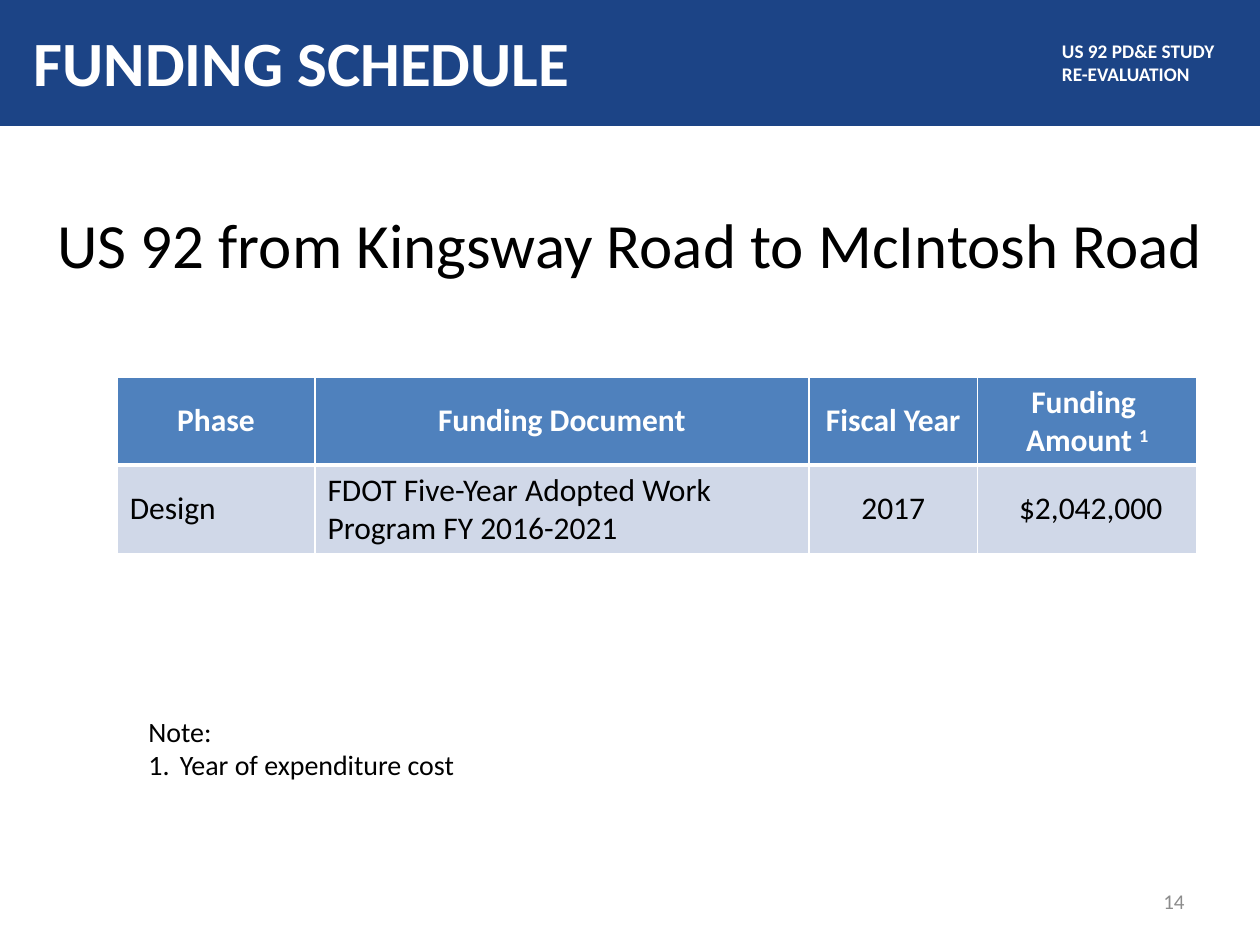
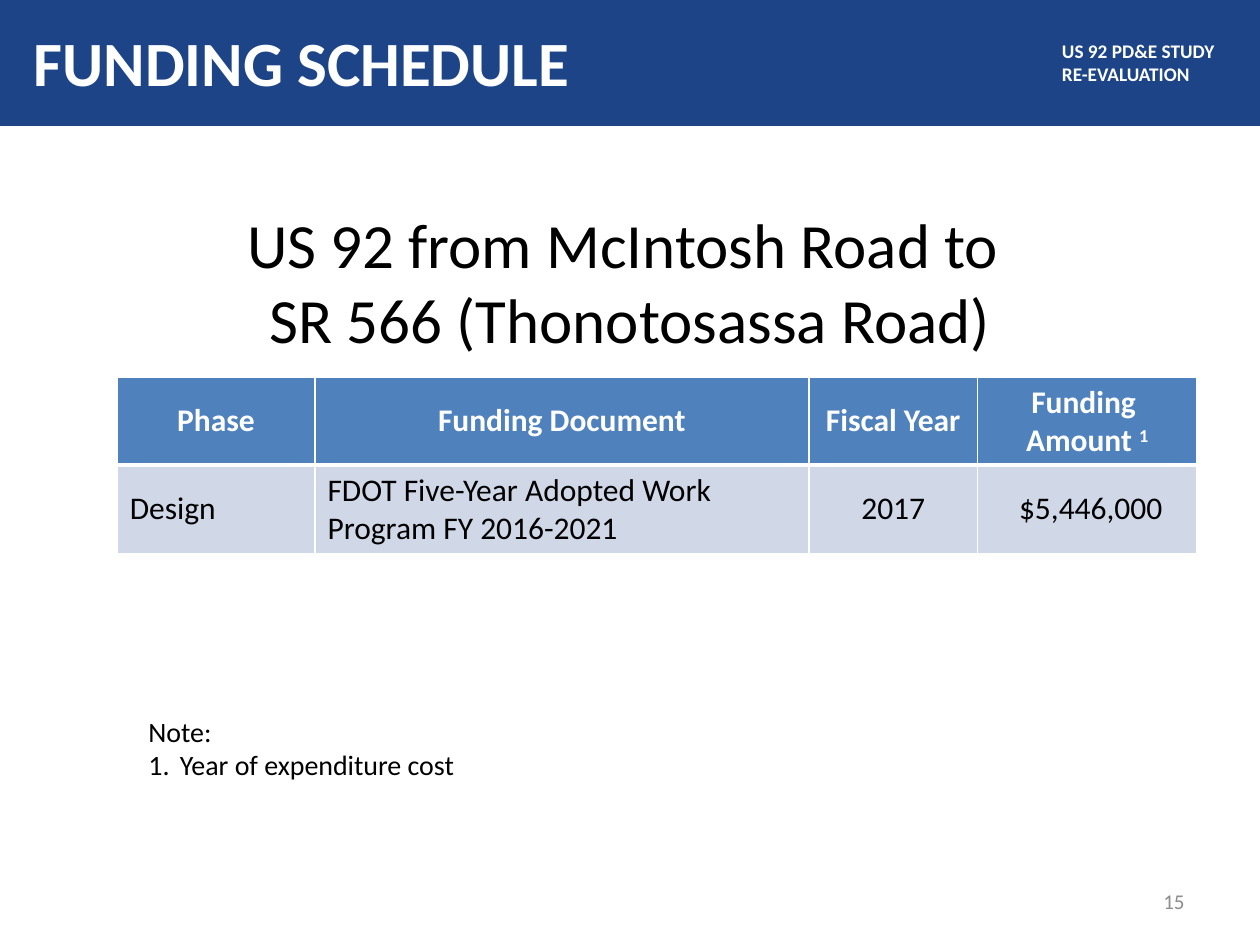
from lxml import etree
from pptx import Presentation
from pptx import util as u
from pptx.dml import color as dml
from pptx.enum import shapes, text
from pptx.oxml import ns

FONT = "Calibri"
COLORS = {
    "band": "1C4486",
    "header": "4F81BD",
    "row": "D0D8E8",
    "white": "FFFFFF",
    "black": "000000",
    "number": "8C8C8C",
}
LEFT, CENTER, RIGHT = text.PP_ALIGN.LEFT, text.PP_ALIGN.CENTER, text.PP_ALIGN.RIGHT
TOP, MIDDLE = text.MSO_ANCHOR.TOP, text.MSO_ANCHOR.MIDDLE

SLIDE_WIDTH, SLIDE_HEIGHT = 10, 7.5
BAND_BOX = (0, 0, SLIDE_WIDTH, 1)
HEADING_BOX = (0, 1.58, SLIDE_WIDTH, 0.71)
TABLE_BOX = (0.93, 2.99, 8.57, 1.4)
NOTE_BOX = (1.08, 5.62, 8, 0.64)
NUMBER_BOX = (7.17, 6.95, 2.33, 0.4)

COLUMN_WIDTHS = (1.57, 3.92, 1.34, 1.74)
HEADERS = ("Phase", "Funding Document", "Fiscal Year", "Funding \nAmount ")
BODY_ALIGNMENTS = (LEFT, LEFT, CENTER, CENTER)
FIRST_NUMBER = 14
SCHEDULES = [
    (["US 92 from Kingsway Road to McIntosh Road"],
     ("Design", "FDOT Five-Year Adopted Work Program FY 2016-2021", "2017", " $2,042,000")),
    (["US 92 from McIntosh Road to ", "SR 566 (Thonotosassa Road)"],
     ("Design", "FDOT Five-Year Adopted Work Program FY 2016-2021", "2017", " $5,446,000")),
]


def rgb(name):
    return dml.RGBColor.from_string(COLORS[name])


def add_run(paragraph, words, size, color, bold=False):
    for index, line in enumerate(words.split("\n")):
        if index:
            paragraph.add_line_break()
        run = paragraph.add_run()
        run.text = line
        run.font.name = FONT
        run.font.size = u.Pt(size)
        run.font.bold = bold
        run.font.color.rgb = rgb(color)
    return run


def add_text(slide, box, lines, size, color, bold=False, align=LEFT, anchor=TOP):
    frame = slide.shapes.add_textbox(*map(u.Inches, box)).text_frame
    frame.word_wrap = True
    frame.vertical_anchor = anchor
    for index, line in enumerate(lines):
        paragraph = frame.add_paragraph() if index else frame.paragraphs[0]
        paragraph.alignment = align
        add_run(paragraph, line, size, color, bold)
    return frame


def add_band(slide, box):
    left, top, width, height = box
    band = slide.shapes.add_shape(shapes.MSO_SHAPE.RECTANGLE, *map(u.Inches, box))
    band.shadow.inherit = False
    band.fill.solid()
    band.fill.fore_color.rgb = rgb("band")
    band.line.fill.background()
    add_text(slide, (left + width - 1.67, top + 0.26, 1.67, 0.47),
             ["US 92 PD&E STUDY\nRE-EVALUATION"], 11, "white", bold=True)
    add_text(slide, (left + 0.17, top + 0.02, 6.5, height - 0.06),
             ["FUNDING SCHEDULE"], 36, "white", bold=True, anchor=MIDDLE)


def set_borders(cell, widths):
    properties = cell._tc.get_or_add_tcPr()
    for side, width in zip("LRTB", widths):
        line = etree.SubElement(properties, ns.qn(f"a:ln{side}"), w=str(u.Pt(width)))
        fill = etree.SubElement(line, ns.qn("a:solidFill"))
        etree.SubElement(fill, ns.qn("a:srgbClr"), val=COLORS["white"])


def fill_cell(cell, words, fill, color, bold, align, borders):
    set_borders(cell, borders)
    cell.fill.solid()
    cell.fill.fore_color.rgb = rgb(fill)
    cell.vertical_anchor = MIDDLE
    paragraph = cell.text_frame.paragraphs[0]
    paragraph.alignment = align
    add_run(paragraph, words, 18, color, bold)


def add_schedule(slide, box, values):
    table = slide.shapes.add_table(2, len(HEADERS), *map(u.Inches, box)).table
    for row in table.rows:
        row.height = u.Inches(box[3] / 2)
    for index, width in enumerate(COLUMN_WIDTHS):
        table.columns[index].width = u.Inches(width)
        fill_cell(table.cell(0, index), HEADERS[index], "header", "white", True,
                  CENTER, (1, 1, 1, 3))
        fill_cell(table.cell(1, index), values[index], "row", "black", False,
                  BODY_ALIGNMENTS[index], (1, 1, 3, 1))
    amount_header = table.cell(0, len(HEADERS) - 1).text_frame.paragraphs[0]
    footnote_mark = add_run(amount_header, "1", 18, "white", True)
    footnote_mark.font._element.set("baseline", "30000")


def add_note(slide, box):
    frame = add_text(slide, box, ["Note:", "Year of expenditure cost"], 16, "black")
    properties = frame.paragraphs[1]._p.get_or_add_pPr()
    properties.set("marL", str(u.Inches(0.25)))
    properties.set("indent", str(-u.Inches(0.25)))
    etree.SubElement(properties, ns.qn("a:buFont"), typeface=FONT)
    etree.SubElement(properties, ns.qn("a:buAutoNum"), type="arabicPeriod")


def add_funding_slide(presentation, number, heading, values):
    slide = presentation.slides.add_slide(presentation.slide_layouts[6])
    add_band(slide, BAND_BOX)
    left, top, width, line_height = HEADING_BOX
    heading_height = line_height + 0.6 * (len(heading) - 1)
    add_text(slide, (left, top, width, heading_height), heading, 36, "black", align=CENTER)
    add_schedule(slide, TABLE_BOX, values)
    add_text(slide, NUMBER_BOX, [str(number)], 12, "number", align=RIGHT, anchor=MIDDLE)
    add_note(slide, NOTE_BOX)


def main():
    presentation = Presentation()
    presentation.slide_width = u.Inches(SLIDE_WIDTH)
    presentation.slide_height = u.Inches(SLIDE_HEIGHT)
    for number, (heading, values) in enumerate(SCHEDULES, FIRST_NUMBER):
        add_funding_slide(presentation, number, heading, values)
    presentation.save("out.pptx")


if __name__ == "__main__":
    main()
